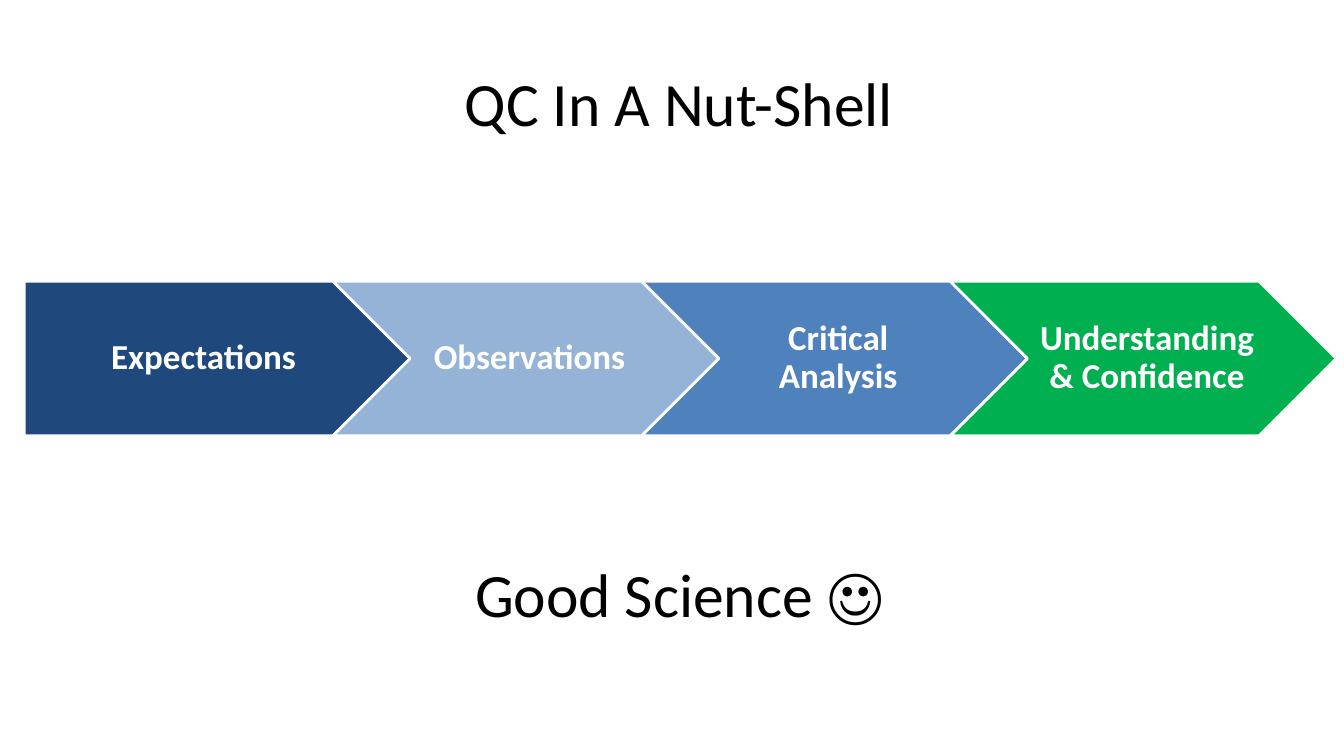
"""Build the quality control process slide."""
from pptx import Presentation
from pptx.dml.color import RGBColor
from pptx.enum.shapes import MSO_SHAPE
from pptx.enum.text import MSO_ANCHOR, PP_ALIGN
from pptx.util import Cm, Pt

PENTAGON = MSO_SHAPE.PENTAGON
CHEVRON = MSO_SHAPE.CHEVRON
MIDDLE = MSO_ANCHOR.MIDDLE
CENTER = PP_ALIGN.CENTER

COLORS = {
    "black": "000000",
    "white": "FFFFFF",
    "navy": "1F497D",
    "light_blue": "95B3D7",
    "blue": "4F81BD",
    "green": "00B050",
}


def color(name):
    return RGBColor.from_string(COLORS[name])


def write_text(shape, text, size, color_name, bold=False):
    frame = shape.text_frame
    frame.word_wrap = True
    frame.vertical_anchor = MIDDLE
    paragraph = frame.paragraphs[0]
    paragraph.text = text
    paragraph.alignment = CENTER
    paragraph.font.name = "Calibri"
    paragraph.font.size = Pt(size)
    paragraph.font.bold = bold
    paragraph.font.color.rgb = color(color_name)
    return frame


presentation = Presentation()
presentation.slide_width = Cm(33.87)
presentation.slide_height = Cm(19.05)
slide = presentation.slides.add_slide(presentation.slide_layouts[6])

headings = [
    ("QC In A Nut-Shell", 1.88, 0.97, 30.48),
    ("Good Science ☺", 9.58, 13.34, 15.09),
]
for text, left, top, width in headings:
    heading = slide.shapes.add_textbox(Cm(left), Cm(top), Cm(width), Cm(3.18))
    write_text(heading, text, 44, "black")

steps = [
    ("Expectations", "navy", PENTAGON, 0.38),
    ("Observations", "light_blue", CHEVRON, 0.28),
    ("Critical Analysis", "blue", CHEVRON, 0.28),
    ("Understanding & Confidence", "green", CHEVRON, 0.28),
]
for index, (text, fill, preset, margin_left) in enumerate(steps):
    step = slide.shapes.add_shape(
        preset, Cm(0.61 + index * 7.78), Cm(7.09), Cm(9.73), Cm(3.89))
    step.shadow.inherit = False
    step.fill.solid()
    step.fill.fore_color.rgb = color(fill)
    step.line.color.rgb = color("white")
    step.line.width = Pt(2)
    frame = write_text(step, text, 25, "white", bold=True)
    frame.paragraphs[0].line_spacing = 0.9
    frame.margin_left = Cm(margin_left)
    frame.margin_right = Cm(0.1)
    frame.margin_top = frame.margin_bottom = Cm(0.18)

presentation.save("out.pptx")
